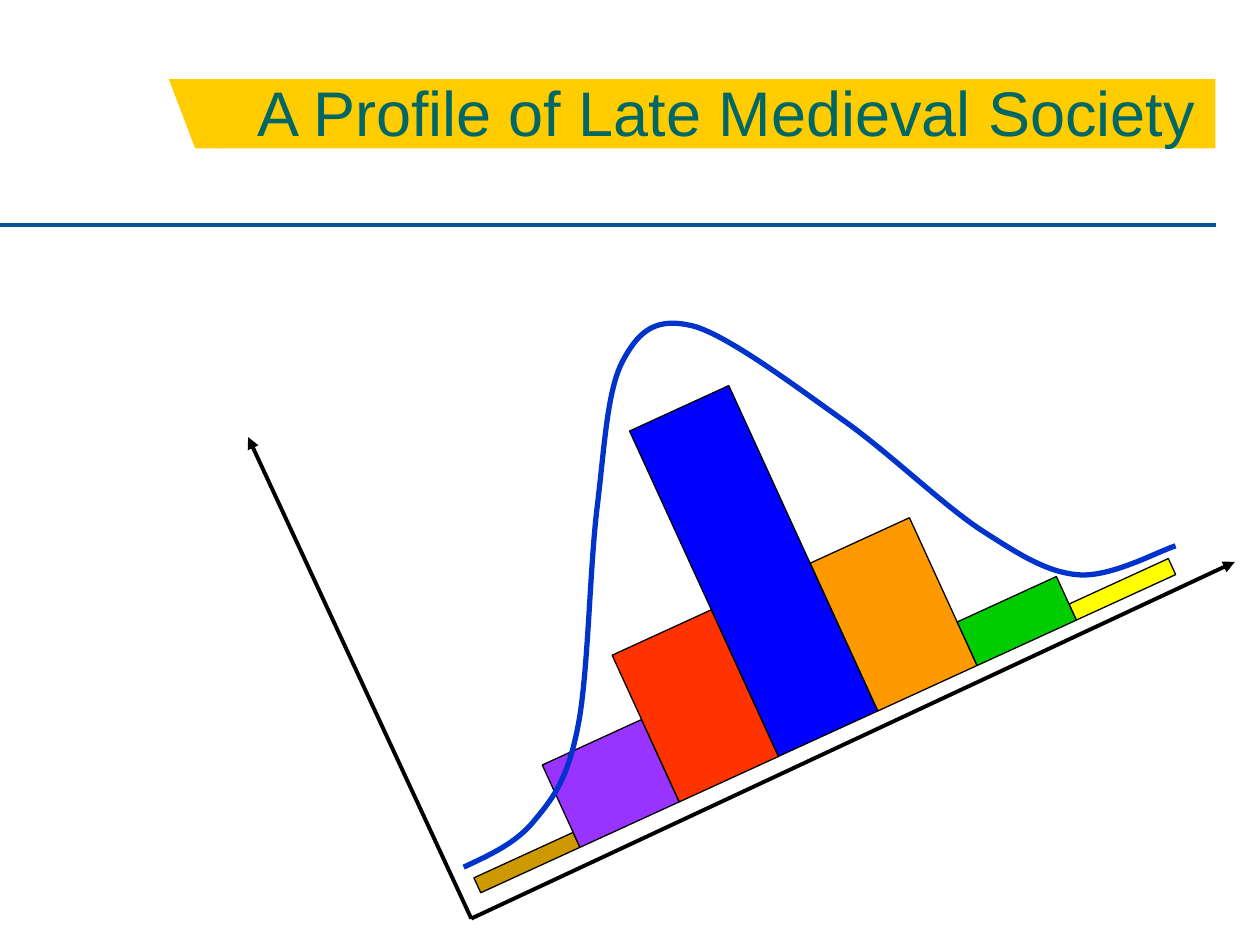
from math import cos, radians, sin

from lxml.etree import SubElement
from pptx import Presentation
from pptx.dml.color import RGBColor
from pptx.enum.shapes import MSO_CONNECTOR, MSO_SHAPE
from pptx.enum.text import MSO_ANCHOR, MSO_AUTO_SIZE, PP_ALIGN
from pptx.oxml.ns import qn
from pptx.util import Pt

BLACK = RGBColor(0, 0, 0)
GOLD = RGBColor(0xFF, 0xCC, 0x00)
TEAL = RGBColor(0x00, 0x66, 0x66)
NAVY = RGBColor(0x00, 0x56, 0x96)
CURVE = RGBColor(0x00, 0x33, 0xCC)

# Bars from left to right: height in points and fill
BARS = [
    (9.4, RGBColor(0xCC, 0x99, 0x00)),
    (51.8, RGBColor(0x99, 0x33, 0xFF)),
    (92.2, RGBColor(0xFF, 0x33, 0x00)),
    (204.5, RGBColor(0x00, 0x00, 0xFF)),
    (92.9, RGBColor(0xFF, 0x99, 0x00)),
    (27.4, RGBColor(0x00, 0xCC, 0x00)),
    (10.1, RGBColor(0xFF, 0xFF, 0x00)),
]
TILT = 24.6
WIDTH = 62.4
BASE = (274.7, 510.2)

# Curve in points: the start, then three control points per segment
PROFILE = [
    (265, 495.4),
    (280.1, 488.2), (295.2, 481.7), (306, 468),
    (316.8, 455), (324.7, 444.2), (330.5, 414),
    (336.2, 384.5), (337, 324), (341.3, 289.4),
    (345.6, 254.2), (347, 221.8), (356.4, 205.2),
    (365.8, 187.9), (375.8, 180.7), (397.4, 186.5),
    (418.3, 193), (457.2, 222.5), (484.6, 241.9),
    (511.2, 261.4), (538.6, 288), (560.2, 302.4),
    (582.5, 316.8), (598.3, 326.9), (616.3, 328.3),
    (635, 329.8), (662.4, 314.6), (671.8, 311.8),
]


def spin(dot, hub, turn):
    """Turn a point clockwise around a hub."""
    c, s = cos(radians(turn)), sin(radians(turn))
    x, y = dot[0] - hub[0], dot[1] - hub[1]
    return hub[0] + x * c - y * s, hub[1] + x * s + y * c


class Deck:
    font = "Arial"

    def __init__(self):
        self.prs = Presentation()
        self.prs.slide_width, self.prs.slide_height = Pt(720), Pt(540)
        self.slide = self.prs.slides.add_slide(self.prs.slide_layouts[5])
        self.shapes = self.slide.shapes

    def style(self, shape, fill=None, line=None, width=0.75):
        shape.shadow.inherit = False
        if fill is None:
            shape.fill.background()
        else:
            shape.fill.solid()
            shape.fill.fore_color.rgb = fill
        if line is None:
            shape.line.fill.background()
        else:
            shape.line.color.rgb = line
            shape.line.width = Pt(width)

    def rect(self, x, y, w, h, fill, line=None, turn=0):
        box = self.shapes.add_shape(
            MSO_SHAPE.RECTANGLE, Pt(x), Pt(y), Pt(w), Pt(h))
        box.rotation = turn
        self.style(box, fill, line)

    def free(self, dots, hub, turn):
        """Outline drawn level around its hub, then turned into place."""
        flat = [tuple(map(Pt, spin(dot, hub, -turn))) for dot in dots]
        build = self.shapes.build_freeform(*flat[0])
        build.add_line_segments(flat[1:], close=False)
        shape = build.convert_to_shape()
        shape.rotation = turn
        return shape

    def patch(self, dots, hub, turn, fill):
        shape = self.free(dots, hub, turn)
        SubElement(next(shape.element.iter(qn("a:path"))), qn("a:close"))
        self.style(shape, fill)

    def curve(self, dots, hub, turn, color, width):
        shape = self.free(dots, hub, turn)
        # Join every three points into one cubic segment
        track = next(shape.element.iter(qn("a:path")))
        steps = track.findall(qn("a:lnTo"))
        for i in range(0, len(steps), 3):
            bend = SubElement(track, qn("a:cubicBezTo"))
            for step in steps[i:i + 3]:
                bend.append(step[0])
                track.remove(step)
        self.style(shape, line=color, width=width)

    def rule(self, start, end, color, arrow=False):
        line = self.shapes.add_connector(
            MSO_CONNECTOR.STRAIGHT, *map(Pt, start + end))
        line.line.color.rgb = color
        line.line.width = Pt(2.25)
        props = line.element.spPr
        if arrow:
            SubElement(props.find(qn("a:ln")), qn("a:tailEnd"), type="triangle")
        SubElement(props, qn("a:effectLst"))

    def title(self, text, x, y, w, h):
        box = self.shapes.title
        box.left, box.top, box.width, box.height = map(Pt, (x, y, w, h))
        # Bring the title in front of the banner
        box.element.getparent().append(box.element)
        frame = box.text_frame
        frame.auto_size = MSO_AUTO_SIZE.NONE
        frame.word_wrap = True
        frame.vertical_anchor = MSO_ANCHOR.BOTTOM
        para = frame.paragraphs[0]
        para.alignment = PP_ALIGN.LEFT
        run = para.add_run()
        run.text = text
        run.font.name, run.font.size = self.font, Pt(36)
        run.font.color.rgb = TEAL


def main():
    deck = Deck()

    # Banner, rule and title
    deck.rule((0, 128.7), (694.6, 128.7), NAVY)
    deck.patch([(111.6, 84.8), (96.5, 45.2), (127.4, 45.2), (127.4, 84.8)],
               (111.95, 65), 270, GOLD)
    deck.rect(127.4, 45.2, 567.2, 39.6, GOLD)
    deck.title("A Profile of Late Medieval Society", 139.7, 23.8, 566, 64.8)

    # Bars side by side on the tilted base line
    c, s = cos(radians(TILT)), sin(radians(TILT))
    for i, (high, fill) in enumerate(BARS):
        along = (i + 0.5) * WIDTH
        x = BASE[0] + along * c - high / 2 * s
        y = BASE[1] - along * s - high / 2 * c
        deck.rect(x - WIDTH / 2, y - high / 2, WIDTH, high, fill, BLACK, -TILT)

    # Axes
    for tip in ((705.6, 321.1), (141.8, 249.8)):
        deck.rule((269.3, 524.9), tip, BLACK, arrow=True)

    # Profile curve
    deck.curve(PROFILE, (418.7, 294.1), 335.8, CURVE, 3)

    deck.prs.save("out.pptx")


if __name__ == "__main__":
    main()
